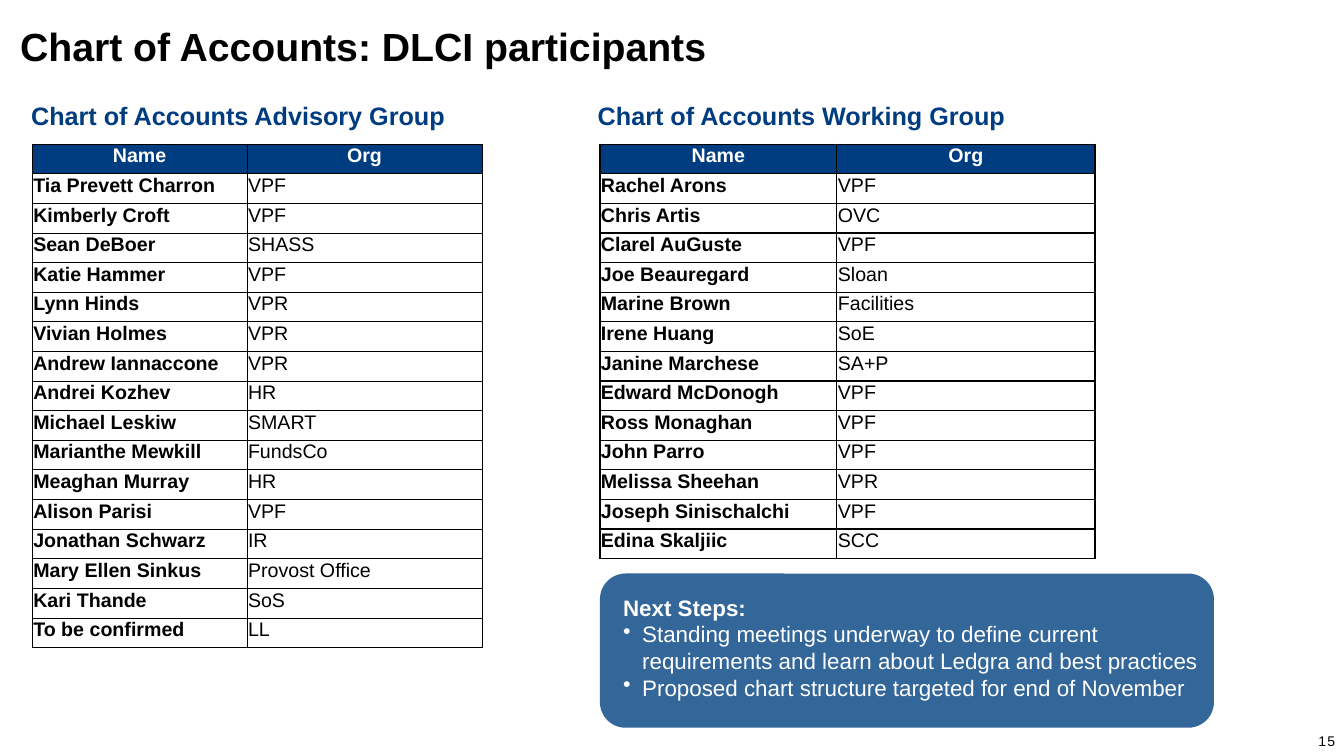
from dataclasses import dataclass

from lxml import etree
from pptx import Presentation
from pptx.dml.color import RGBColor
from pptx.enum import shapes, text
from pptx.oxml import ns
from pptx.util import Inches, Pt


@dataclass(frozen=True)
class Theme:
    font: str = "Arial"
    black: str = "000000"
    white: str = "FFFFFF"
    navy: str = "003C80"
    steel: str = "336699"
    title: int = 28
    heading: int = 18
    callout: int = 16
    table: int = 14
    page: int = 10


THEME = Theme()
ROW_HEIGHT = 0.29

ADVISORY_GROUP = [
    ("Tia Prevett Charron", "VPF"),
    ("Kimberly Croft", "VPF"),
    ("Sean DeBoer", "SHASS"),
    ("Katie Hammer", "VPF"),
    ("Lynn Hinds", "VPR"),
    ("Vivian Holmes", "VPR"),
    ("Andrew Iannaccone", "VPR"),
    ("Andrei Kozhev", "HR"),
    ("Michael Leskiw", "SMART"),
    ("Marianthe Mewkill", "FundsCo"),
    ("Meaghan Murray", "HR"),
    ("Alison Parisi", "VPF"),
    ("Jonathan Schwarz", "IR"),
    ("Mary Ellen Sinkus", "Provost Office"),
    ("Kari Thande", "SoS"),
    ("To be confirmed", "LL"),
]
WORKING_GROUP = [
    ("Rachel Arons", "VPF"),
    ("Chris Artis", "OVC"),
    ("Clarel AuGuste", "VPF"),
    ("Joe Beauregard", "Sloan"),
    ("Marine Brown", "Facilities"),
    ("Irene Huang", "SoE"),
    ("Janine Marchese", "SA+P"),
    ("Edward McDonogh", "VPF"),
    ("Ross Monaghan", "VPF"),
    ("John Parro", "VPF"),
    ("Melissa Sheehan", "VPR"),
    ("Joseph Sinischalchi", "VPF"),
    ("Edina Skaljiic", "SCC"),
]
NEXT_STEPS = [
    "Standing meetings underway to define current requirements "
    "and learn about Ledgra and best practices",
    "Proposed chart structure targeted for end of November",
]


def add_run(paragraph, words, size, color, bold=False):
    run = paragraph.add_run()
    run.text = words
    run.font.name = THEME.font
    run.font.size = Pt(size)
    run.font.bold = bold
    run.font.color.rgb = RGBColor.from_string(color)
    return run


def add_frame(slide, left, top, width, height, margins=(0.1, 0.05, 0.1, 0.05)):
    """Add a wrapping text box and return its text frame."""
    box = slide.shapes.add_textbox(*map(Inches, (left, top, width, height)))
    frame = box.text_frame
    frame.word_wrap = True
    set_margins(frame, margins)
    return frame


def set_margins(holder, margins):
    """Set left, top, right and bottom margins of a text frame or cell."""
    (holder.margin_left, holder.margin_top,
     holder.margin_right, holder.margin_bottom) = map(Inches, margins)


def set_borders(cell, width):
    properties = cell._tc.get_or_add_tcPr()
    for position, side in enumerate(("lnL", "lnR", "lnT", "lnB")):
        line = etree.Element(ns.qn(f"a:{side}"), w=str(Pt(width)))
        fill = etree.SubElement(line, ns.qn("a:solidFill"))
        etree.SubElement(fill, ns.qn("a:srgbClr"), val=THEME.black)
        properties.insert(position, line)


def fill_cell(cell, words, is_header, bold, border):
    set_margins(cell, (0.01, 0.01, 0.01, 0.05))
    paragraph = cell.text_frame.paragraphs[0]
    if is_header:
        cell.fill.solid()
        cell.fill.fore_color.rgb = RGBColor.from_string(THEME.navy)
        paragraph.alignment = text.PP_ALIGN.CENTER
    else:
        cell.fill.background()
    color = THEME.white if is_header else THEME.black
    add_run(paragraph, words, THEME.table, color, bold)
    set_borders(cell, border)


def add_group(slide, heading, members, heading_left, table_left, widths, border):
    """Add a group's heading and its table of members."""
    frame = add_frame(slide, heading_left, 0.95, 5.12, 0.4)
    add_run(frame.paragraphs[0], heading, THEME.heading, THEME.navy, True)

    rows = [("Name", "Org"), *members]
    table = slide.shapes.add_table(
        len(rows), len(widths), Inches(table_left), Inches(1.43),
        Inches(sum(widths)), Inches(ROW_HEIGHT * len(rows))).table
    table.horz_banding = False
    for column, width in zip(table.columns, widths):
        column.width = Inches(width)
    for r, row in enumerate(rows):
        table.rows[r].height = Inches(ROW_HEIGHT)
        for c, words in enumerate(row):
            fill_cell(table.cell(r, c), words, r == 0, r == 0 or c == 0, border)


def add_bullet(paragraph, indent):
    properties = paragraph._p.get_or_add_pPr()
    properties.set("marL", str(Inches(indent)))
    properties.set("indent", str(-Inches(indent)))
    etree.SubElement(properties, ns.qn("a:buChar"), char="•")
    tabs = etree.SubElement(properties, ns.qn("a:tabLst"))
    etree.SubElement(tabs, ns.qn("a:tab"), pos=str(Inches(0.5)), algn="l")


def add_next_steps(slide):
    panel = slide.shapes.add_shape(
        shapes.MSO_SHAPE.ROUNDED_RECTANGLE,
        *map(Inches, (5.95, 5.69, 6.09, 1.53)))
    panel.shadow.inherit = False
    panel.fill.solid()
    panel.fill.fore_color.rgb = RGBColor.from_string(THEME.steel)
    panel.line.fill.background()

    frame = add_frame(slide, 6.18, 5.84, 5.86, 1.18, (0, 0.05, 0.1, 0.05))
    add_run(frame.paragraphs[0], "Next Steps:", THEME.callout, THEME.white, True)
    for step in NEXT_STEPS:
        paragraph = frame.add_paragraph()
        add_bullet(paragraph, 0.19)
        add_run(paragraph, step, THEME.callout, THEME.white)


def add_title(slide, words):
    frame = add_frame(slide, 0.2, 0.27, 12.33, 0.48, (0, 0, 0, 0))
    paragraph = frame.paragraphs[0]
    paragraph.line_spacing = 0.9
    add_run(paragraph, words, THEME.title, THEME.black, True)


def add_page_number(slide, number):
    paragraph = add_frame(slide, 12.78, 7.22, 0.56, 0.27).paragraphs[0]
    paragraph.alignment = text.PP_ALIGN.RIGHT
    run = add_run(paragraph, number, THEME.page, THEME.black)
    run.font._element.set("spc", "80")


def main():
    deck = Presentation()
    deck.slide_width, deck.slide_height = Inches(13.33), Inches(7.5)
    slide = deck.slides.add_slide(deck.slide_layouts[6])
    add_title(slide, "Chart of Accounts: DLCI participants")
    add_page_number(slide, "15")
    add_group(slide, "Chart of Accounts Advisory Group", ADVISORY_GROUP,
              0.21, 0.32, (2.13, 2.33), 0.5)
    add_group(slide, "Chart of Accounts Working Group", WORKING_GROUP,
              5.83, 5.95, (2.35, 2.56), 1)
    add_next_steps(slide)
    deck.save("out.pptx")


if __name__ == "__main__":
    main()
